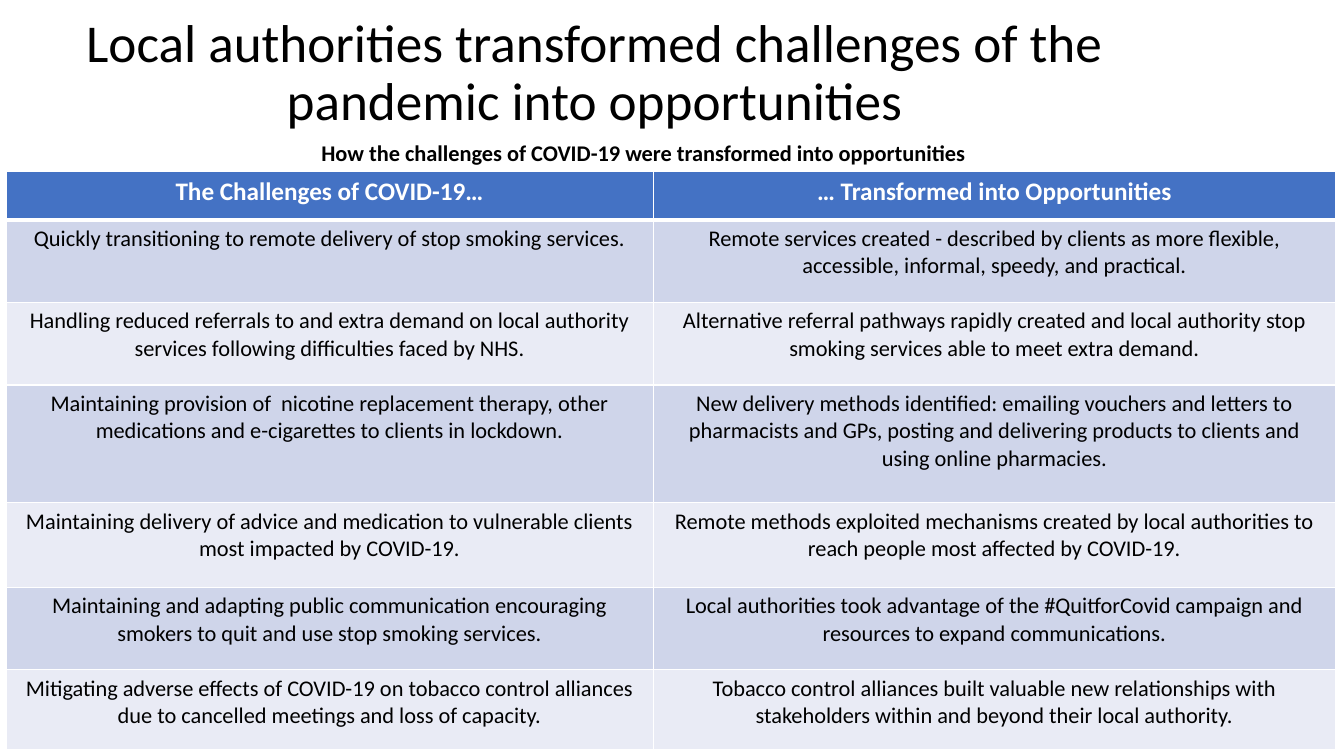
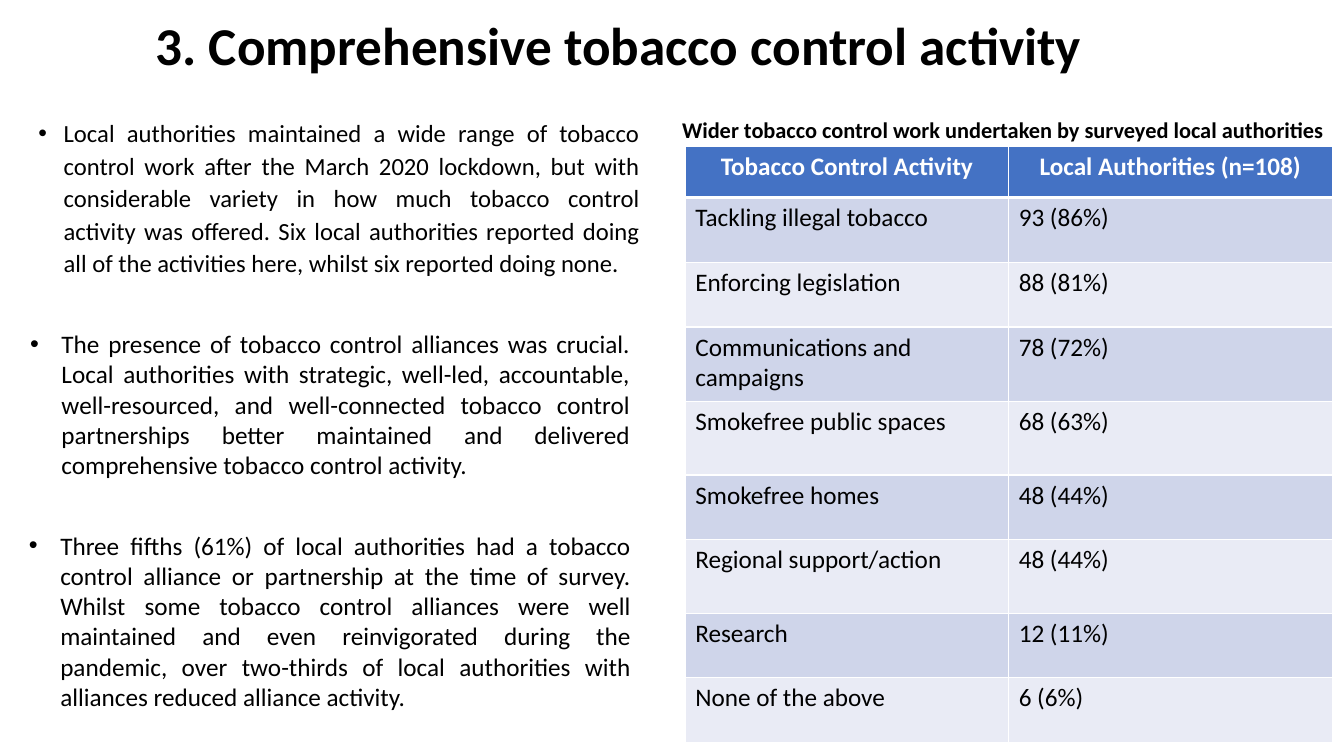
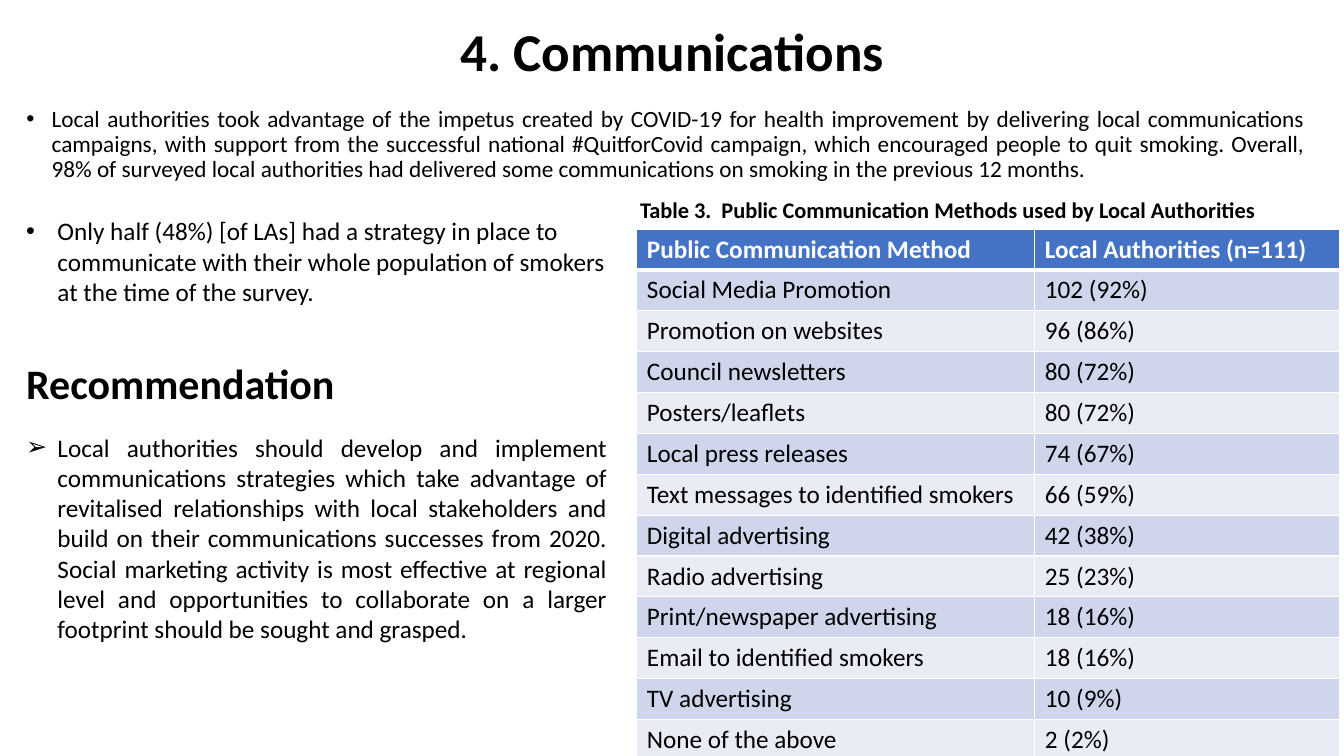
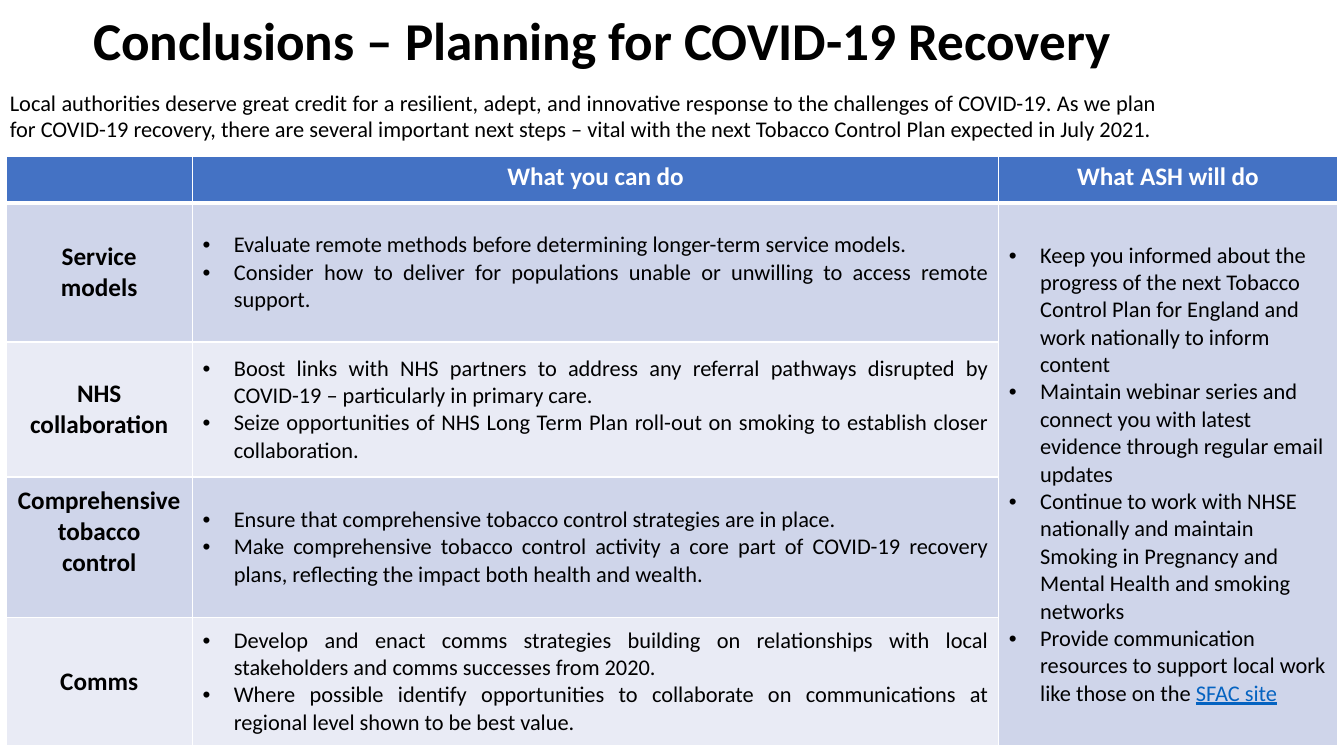
from dataclasses import dataclass

from lxml.etree import SubElement
from pptx import Presentation
from pptx.dml.color import RGBColor
from pptx.enum.text import MSO_ANCHOR, MSO_AUTO_SIZE, PP_ALIGN
from pptx.oxml.ns import qn
from pptx.util import Cm, Pt


@dataclass(frozen=True)
class Theme:
    font: str = "Calibri"
    ink: str = "000000"
    white: str = "FFFFFF"
    link: str = "0563C1"
    header: str = "4472C4"
    bands: tuple = ("CFD5EA", "E9EBF5")
    title_size: float = 38
    heading_size: float = 30
    text_size: float = 18
    small_size: float = 16
    rule: float = 1
    header_rule: float = 3


THEME = Theme()


@dataclass(frozen=True)
class Style:
    size: float = THEME.text_size
    bold: bool = False
    color: str = THEME.ink
    underline: bool = False
    align: PP_ALIGN = PP_ALIGN.LEFT
    spacing: float = 1.0
    before: float = 0
    bullet: str = ""
    indent: float = 0.79


LEFT, CENTER, JUSTIFY = PP_ALIGN.LEFT, PP_ALIGN.CENTER, PP_ALIGN.JUSTIFY
SMALL = THEME.small_size
STYLES = {
    "title": Style(THEME.title_size, True, align=CENTER, spacing=0.9),
    "light title": Style(THEME.title_size, align=CENTER, spacing=0.9),
    "caption": Style(SMALL, True),
    "intro": Style(SMALL, align=JUSTIFY),
    "heading": Style(THEME.heading_size, True),
    "loose point": Style(17.6, align=JUSTIFY, spacing=1.1, bullet="•", indent=0.64),
    "tight point": Style(16.6, align=JUSTIFY, spacing=0.9, bullet="•", indent=0.64),
    "point": Style(align=JUSTIFY, bullet="•"),
    "ragged point": Style(bullet="•"),
    "arrow point": Style(align=JUSTIFY, before=17, bullet="➢"),
    "header": Style(bold=True, color=THEME.white, align=CENTER),
    "left header": Style(bold=True, color=THEME.white),
    "cell": Style(),
    "centred cell": Style(SMALL, align=CENTER),
    "row label": Style(bold=True, align=CENTER),
    "action": Style(SMALL, align=JUSTIFY, bullet="•"),
    "pledge": Style(SMALL, bullet="•"),
    "link": Style(SMALL, color=THEME.link, underline=True),
}

# Boxes are left, top, width, height in centimetres.
# Text is a list of (style, text) paragraphs.
SLIDES = [
    {
        "title": ("light title", "Local authorities transformed challenges of the pandemic into opportunities",
                  (0.38, 0.03, 29.21, 3.68)),
        "table": {
            "corner": (0.15, 4.32),
            "columns": (16.31, 17.2),
            "heights": (1.22, 2.08, 2.08, 2.97, 2.13, 2.08, 2.01),
            "header_style": "header",
            "styles": ("centred cell", "centred cell"),
            "rows": [
                ("The Challenges of COVID-19…", "… Transformed into Opportunities"),
                ("Quickly transitioning to remote delivery of stop smoking services.",
                 "Remote services created - described by clients as more flexible, accessible, informal, speedy, and practical."),
                ("Handling reduced referrals to and extra demand on local authority services following difficulties faced by NHS.",
                 "Alternative referral pathways rapidly created and local authority stop smoking services able to meet extra demand."),
                ("Maintaining provision of  nicotine replacement therapy, other medications and e-cigarettes to clients in lockdown.",
                 "New delivery methods identified: emailing vouchers and letters to pharmacists and GPs, posting and delivering products to clients and using online pharmacies."),
                ("Maintaining delivery of advice and medication to vulnerable clients most impacted by COVID-19.",
                 "Remote methods exploited mechanisms created by local authorities to reach people most affected by COVID-19."),
                ("Maintaining and adapting public communication encouraging smokers to quit and use stop smoking services.",
                 "Local authorities took advantage of the #QuitforCovid campaign and resources to expand communications."),
                ("Mitigating adverse effects of COVID-19 on tobacco control alliances due to cancelled meetings and loss of capacity.",
                 "Tobacco control alliances built valuable new relationships with stakeholders within and beyond their local authority."),
            ],
        },
        "texts": [
            ((7.85, 3.38, 26.02, 0.94),
             [("caption", "How the challenges of COVID-19 were transformed into opportunities")]),
        ],
    },
    {
        "title": ("title", "3. Comprehensive tobacco control activity", (0.99, 0.15, 29.21, 2.13)),
        "body": ((0.71, 2.77, 15.67, 4.62), [
            ("loose point", "Local authorities maintained a wide range of tobacco control work after the March 2020 lockdown, but with considerable variety in how much tobacco control activity was offered. Six local authorities reported doing all of the activities here, whilst six reported doing none."),
        ]),
        "table": {
            "corner": (17.27, 3.68),
            "columns": (8.15, 8.15),
            "heights": (1.3, 1.63, 1.63, 1.88, 1.85, 1.63, 1.85, 1.63, 1.63),
            "header_style": "header",
            "styles": ("cell", "cell"),
            "rows": [
                ("Tobacco Control Activity", "Local Authorities (n=108)"),
                ("Tackling illegal tobacco", "93 (86%)"),
                ("Enforcing legislation", "88 (81%)"),
                ("Communications and campaigns", "78 (72%)"),
                ("Smokefree public spaces", "68 (63%)"),
                ("Smokefree homes", "48 (44%)"),
                ("Regional support/action", "48 (44%)"),
                ("Research", "12 (11%)"),
                ("None of the above", "6 (6%)"),
            ],
        },
        "texts": [
            ((0.48, 13.23, 15.67, 5.64), [
                ("point", "Three fifths (61%) of local authorities had a tobacco control alliance or partnership at the time of survey. Whilst some tobacco control alliances were well maintained and even reinvigorated during the pandemic, over two-thirds of local authorities with alliances reduced alliance activity."),
            ]),
            ((16.94, 2.79, 16.93, 0.94),
             [("caption", "Wider tobacco control work undertaken by surveyed local authorities")]),
            ((0.51, 8.15, 15.62, 4.88), [
                ("point", "The presence of tobacco control alliances was crucial. Local authorities with strategic, well-led, accountable, well-resourced, and well-connected tobacco control partnerships better maintained and delivered comprehensive tobacco control activity."),
            ]),
        ],
    },
    {
        "title": ("title", "4. Communications", (2.34, -0.48, 29.21, 3.68)),
        "body": ((0.41, 2.57, 32.69, 2.44), [
            ("tight point", "Local authorities took advantage of the impetus created by COVID-19 for health improvement by delivering local communications campaigns, with support from the successful national #QuitforCovid campaign, which encouraged people to quit smoking. Overall, 98% of surveyed local authorities had delivered some communications on smoking in the previous 12 months."),
        ]),
        "table": {
            "corner": (16.05, 5.77),
            "columns": (10.03, 7.67),
            "heights": (1.02,) * 13,
            "header_style": "left header",
            "styles": ("cell", "cell"),
            "rows": [
                ("Public Communication Method", "Local Authorities (n=111)"),
                ("Social Media Promotion", "102 (92%)"),
                ("Promotion on websites", "96 (86%)"),
                ("Council newsletters", "80 (72%)"),
                ("Posters/leaflets", "80 (72%)"),
                ("Local press releases", "74 (67%)"),
                ("Text messages to identified smokers", "66 (59%)"),
                ("Digital advertising", "42 (38%)"),
                ("Radio advertising", "25 (23%)"),
                ("Print/newspaper advertising", "18 (16%)"),
                ("Email to identified smokers", "18 (16%)"),
                ("TV advertising", "10 (9%)"),
                ("None of the above", "2 (2%)"),
            ],
        },
        "texts": [
            ((0.41, 5.31, 15.14, 5.13), [
                ("ragged point", "Only half (48%) [of LAs] had a strategy in place to communicate with their whole population of smokers at the time of the survey."),
            ]),
            ((15.88, 4.83, 17.7, 0.94),
             [("caption", "Table 3.  Public Communication Methods used by Local Authorities")]),
            ((0.41, 8.89, 15.14, 8.28), [
                ("heading", "Recommendation"),
                ("arrow point", "Local authorities should develop and implement communications strategies which take advantage of revitalised relationships with local stakeholders and build on their communications successes from 2020. Social marketing activity is most effective at regional level and opportunities to collaborate on a larger footprint should be sought and grasped."),
            ]),
        ],
    },
    {
        "title": ("title", "Conclusions – Planning for COVID-19 Recovery", (0.58, -0.74, 29.21, 3.68)),
        "table": {
            "corner": (0.15, 3.94),
            "columns": (4.7, 20.32, 8.53),
            "heights": (1.17, 3.51, 3.4, 3.53, 3.25),
            "header_style": "header",
            "styles": ("row label", "action", "pledge"),
            "anchor": MSO_ANCHOR.MIDDLE,
            "merge": ((1, 2), (4, 2)),
            "bottom_margins": {(3, 0): 0.89},
            "rows": [
                ("", "What you can do", "What ASH will do"),
                (["Service", "models"],
                 ["Evaluate remote methods before determining longer-term service models.",
                  "Consider how to deliver for populations unable or unwilling to access remote support."],
                 ["Keep you informed about the progress of the next Tobacco Control Plan for England and work nationally to inform content",
                  "Maintain webinar series and connect you with latest evidence through regular email updates",
                  "Continue to work with NHSE nationally and maintain Smoking in Pregnancy and Mental Health and smoking networks",
                  ("Provide communication resources to support local work like those on the ", "SFAC site")]),
                (["NHS", "collaboration"],
                 ["Boost links with NHS partners to address any referral pathways disrupted by COVID-19 – particularly in primary care.",
                  "Seize opportunities of NHS Long Term Plan roll-out on smoking to establish closer collaboration."], ""),
                (["Comprehensive", "tobacco", "control"],
                 ["Ensure that comprehensive tobacco control strategies are in place.",
                  "Make comprehensive tobacco control activity a core part of COVID-19 recovery plans, reflecting the impact both health and wealth."], ""),
                ("Comms",
                 ["Develop and enact comms strategies building on relationships with local stakeholders and comms successes from 2020.",
                  "Where possible identify opportunities to collaborate on communications at regional level shown to be best value."], ""),
            ],
        },
        "texts": [
            ((0, 2.11, 29.41, 2.39), [
                ("intro", "Local authorities deserve great credit for a resilient, adept, and innovative response to the challenges of COVID-19. As we plan for COVID-19 recovery, there are several important next steps – vital with the next Tobacco Control Plan expected in July 2021."),
            ]),
        ],
    },
]


def set_all(target, values):
    for attribute, value in values.items():
        setattr(target, attribute, value)


def add_run(paragraph, text, style):
    run = paragraph.add_run()
    run.text = text
    set_all(run.font, {"name": THEME.font, "size": Pt(style.size),
                       "bold": style.bold, "underline": style.underline})
    run.font.color.rgb = RGBColor.from_string(style.color)


def add_bullet(paragraph, style):
    properties = paragraph._p.get_or_add_pPr()
    indent = int(Cm(style.indent))
    properties.set("marL", str(indent))
    properties.set("indent", str(-indent))
    SubElement(properties, qn("a:buFont")).set("typeface", "Arial")
    SubElement(properties, qn("a:buChar")).set("char", style.bullet)


def write(frame, paragraphs):
    """Fill a frame; in a (lead, link) text the second part is styled as a link."""
    for index, (style_name, text) in enumerate(paragraphs):
        style = STYLES[style_name]
        paragraph = frame.add_paragraph() if index else frame.paragraphs[0]
        if style.bullet:
            add_bullet(paragraph, style)
        set_all(paragraph, {"alignment": style.align, "line_spacing": style.spacing,
                            "space_before": Pt(style.before), "space_after": Pt(0)})
        lead, link = text if isinstance(text, tuple) else (text, "")
        add_run(paragraph, lead, style)
        if link:
            add_run(paragraph, link, STYLES["link"])


def fill_placeholder(placeholder, box, anchor, paragraphs):
    set_all(placeholder, dict(zip(("left", "top", "width", "height"), map(Cm, box))))
    set_all(placeholder.text_frame, {"word_wrap": True, "vertical_anchor": anchor,
                                     "auto_size": MSO_AUTO_SIZE.NONE})
    write(placeholder.text_frame, paragraphs)


def add_text(slide, box, paragraphs):
    frame = slide.shapes.add_textbox(*map(Cm, box)).text_frame
    set_all(frame, {"word_wrap": True, "auto_size": MSO_AUTO_SIZE.SHAPE_TO_FIT_TEXT})
    write(frame, paragraphs)


def add_borders(cell, row):
    """White rules all round, the one under the header row thicker."""
    properties = cell._tc.get_or_add_tcPr()
    thick_side = {0: "lnB", 1: "lnT"}.get(row)
    for side in ("lnL", "lnR", "lnT", "lnB"):
        width = THEME.header_rule if side == thick_side else THEME.rule
        line = SubElement(properties, qn(f"a:{side}"), w=str(int(Pt(width))))
        solid = SubElement(line, qn("a:solidFill"))
        SubElement(solid, qn("a:srgbClr")).set("val", THEME.white)


def add_table(slide, content):
    rows, columns, heights = content["rows"], content["columns"], content["heights"]
    box = (*content["corner"], sum(columns), sum(heights))
    table = slide.shapes.add_table(len(rows), len(columns), *map(Cm, box)).table
    for column, width in zip(table.columns, columns):
        column.width = Cm(width)
    for row, height in zip(table.rows, heights):
        row.height = Cm(height)

    for r, row in enumerate(rows):
        fill = THEME.bands[(r - 1) % 2] if r else THEME.header
        for c, text in enumerate(row):
            cell = table.cell(r, c)
            add_borders(cell, r)
            cell.fill.solid()
            cell.fill.fore_color.rgb = RGBColor.from_string(fill)
            if r and "anchor" in content:
                cell.vertical_anchor = content["anchor"]
            if text:
                style = content["styles"][c] if r else content["header_style"]
                parts = text if isinstance(text, list) else [text]
                write(cell.text_frame, [(style, part) for part in parts])

    for position, margin in content.get("bottom_margins", {}).items():
        table.cell(*position).margin_bottom = Cm(margin)
    if "merge" in content:
        first, last = content["merge"]
        table.cell(*first).merge(table.cell(*last))


def build_slide(deck, content):
    layout = deck.slide_layouts.get_by_name("Title and Content" if "body" in content else "Title Only")
    slide = deck.slides.add_slide(layout)
    style, title, box = content["title"]
    fill_placeholder(slide.shapes.title, box, MSO_ANCHOR.MIDDLE, [(style, title)])
    if "body" in content:
        box, paragraphs = content["body"]
        fill_placeholder(slide.placeholders[1], box, MSO_ANCHOR.TOP, paragraphs)
    add_table(slide, content["table"])
    for box, paragraphs in content["texts"]:
        add_text(slide, box, paragraphs)


def main():
    deck = Presentation()
    set_all(deck, {"slide_width": Cm(33.87), "slide_height": Cm(19.05)})
    for content in SLIDES:
        build_slide(deck, content)
    deck.save("out.pptx")


if __name__ == "__main__":
    main()
